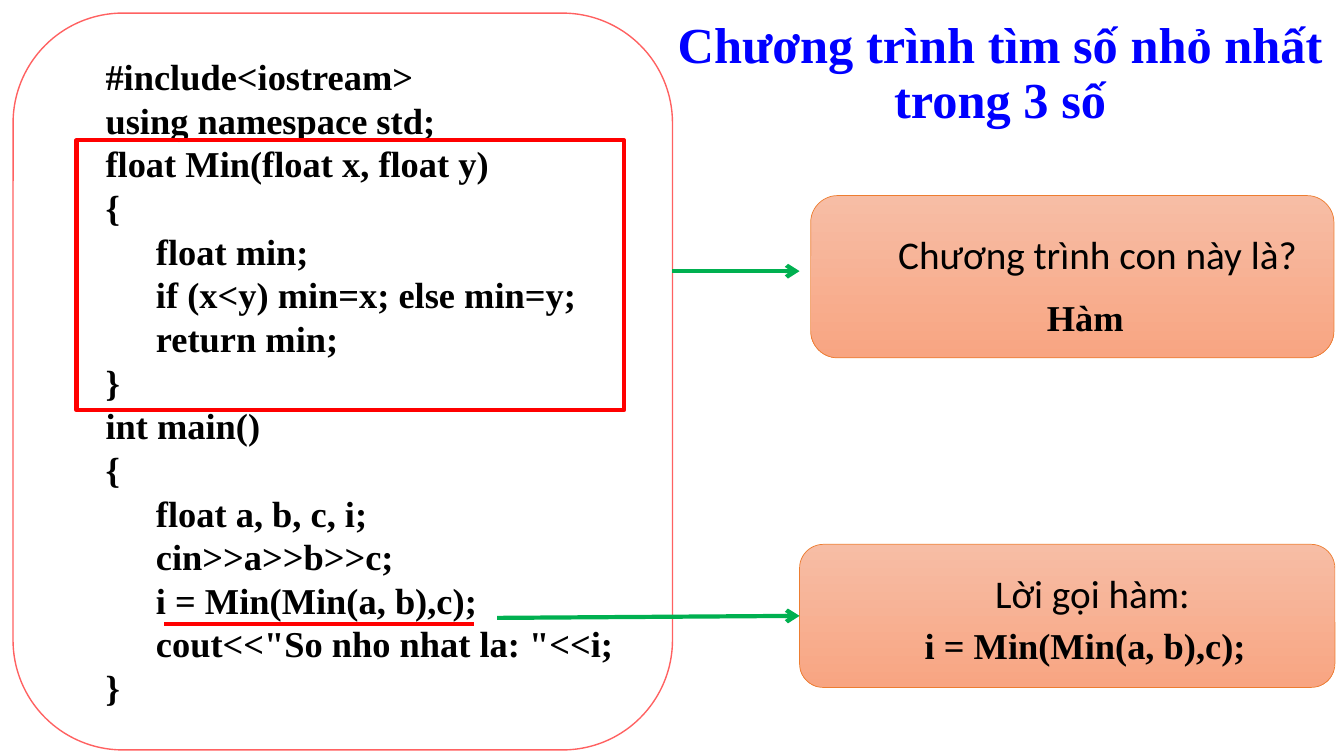
from pptx import Presentation
from pptx.dml.color import RGBColor
from pptx.enum import shapes as es, text as et
from pptx.oxml import ns
from pptx.util import Inches, Pt
from lxml import etree

SERIF = "Times New Roman"
CODE = [
    (0.5, "#include<iostream>"),
    (0.5, "using namespace std;"),
    (0.5, "float Min(float x, float y)"),
    (0.5, "{"),
    (0.5, "\tfloat min;"),
    (0.5, "\tif (x<y) min=x; else min=y;"),
    (0.5, "\treturn min;"),
    (0.5, "}"),
    (0.5, "int main()"),
    (0.5, "{"),
    (0.5, "\tfloat a, b, c, i;"),
    (0.5, "\tcin>>a>>b>>c;"),
    (1, "i = Min(Min(a, b),c);"),
    (1, "cout<<\"So nho nhat la: \"<<i;"),
    (0.5, "}"),
]


def rgb(code):
    return RGBColor.from_string(code)


def place(box):
    return [Inches(v) for v in box]


def sub(node, tag, **attrs):
    return etree.SubElement(node, ns.qn(tag), **attrs)


def stroke(item, color, width):
    item.line.color.rgb = rgb(color)
    item.line.width = Pt(width)


def style(par, size, face=SERIF, bold=True, color="000000",
          align=et.PP_ALIGN.CENTER, indent=0):
    font = par.font
    font.size, font.name, font.bold = Pt(size), face, bold
    font.color.rgb = rgb(color)
    par.alignment = align
    props = par._p.get_or_add_pPr()
    props.set("marL", str(Inches(indent)))
    props.set("indent", "0")


def add_box(slide, box, kind, color, width):
    shape = slide.shapes.add_shape(kind, *place(box))
    shape.shadow.inherit = False
    shape.fill.background()
    stroke(shape, color, width)
    shape.text_frame.word_wrap = True
    shape.text_frame.vertical_anchor = et.MSO_ANCHOR.MIDDLE
    return shape


def add_title(slide, label):
    title = slide.shapes.title
    title.left, title.top, title.width, title.height = place((6.51, 0.15, 6.82, 0.84))
    frame = title.text_frame
    frame.text = label
    frame.word_wrap = True
    frame.auto_size = et.MSO_AUTO_SIZE.NONE
    frame.vertical_anchor = et.MSO_ANCHOR.TOP
    style(frame.paragraphs[0], 36, color="0000FF")
    frame.paragraphs[0].line_spacing = 0.9


def add_code(slide):
    panel = add_box(slide, (0.13, 0.13, 6.54, 7.31),
                    es.MSO_SHAPE.ROUNDED_RECTANGLE, "FF0000", 1)
    tint = panel.line.fill._xPr.find(".//" + ns.qn("a:srgbClr"))
    sub(tint, "a:alpha", val="61000")
    frame = panel.text_frame
    frame.text = "\n".join(line for _, line in CODE)
    for par, (indent, _) in zip(frame.paragraphs, CODE):
        style(par, 26, align=et.PP_ALIGN.LEFT, indent=indent)


def add_card(slide, box, label):
    card = add_box(slide, box, es.MSO_SHAPE.ROUNDED_RECTANGLE, "ED7D31", 0.5)
    card.fill.gradient()
    card.fill.gradient_angle = 270
    for stop, color in zip(card.fill.gradient_stops, ("F7BDA5", "F8A582")):
        stop.color.rgb = rgb(color)
    frame = card.text_frame
    frame.margin_bottom = Inches(0.5)
    frame.text = label
    style(frame.paragraphs[0], 28, "Calibri", False, indent=0.5)
    return card


def add_note(slide, box, label):
    frame = slide.shapes.add_textbox(*place(box)).text_frame
    frame.word_wrap = True
    frame.text = label
    style(frame.paragraphs[0], 26)


def add_line(slide, ends, color, arrow=False):
    line = slide.shapes.add_connector(es.MSO_CONNECTOR.STRAIGHT, *place(ends))
    stroke(line, color, 3)
    if arrow:
        sub(line.line._get_or_add_ln(), "a:tailEnd", type="arrow")
    sub(line._element.spPr, "a:effectLst")
    return line


def main():
    deck = Presentation()
    deck.slide_width, deck.slide_height = Inches(13.33), Inches(7.5)
    slide = deck.slides.add_slide(deck.slide_layouts[5])

    add_title(slide, "Chương trình tìm số nhỏ nhất trong 3 số")
    add_code(slide)
    add_box(slide, (0.76, 1.39, 5.43, 2.68), es.MSO_SHAPE.RECTANGLE, "FF0000", 3)
    add_line(slide, (1.63, 6.19, 4.7, 6.19), "FF0000")

    add_line(slide, (6.67, 2.69, 7.93, 2.69), "00B050", True)
    add_card(slide, (8.04, 1.94, 5.19, 1.61), "Chương trình con này là?")
    call = add_card(slide, (7.93, 5.4, 5.31, 1.42), "Lời gọi hàm:")
    link = add_line(slide, (4.93, 6.13, 7.93, 6.11), "00B050", True)
    link.end_connect(call, 1)

    add_note(slide, (8.64, 6.13, 4.25, 0.54), "i = Min(Min(a, b),c);")
    add_note(slide, (9.27, 2.88, 2.99, 0.54), "Hàm")
    deck.save("out.pptx")


if __name__ == "__main__":
    main()
